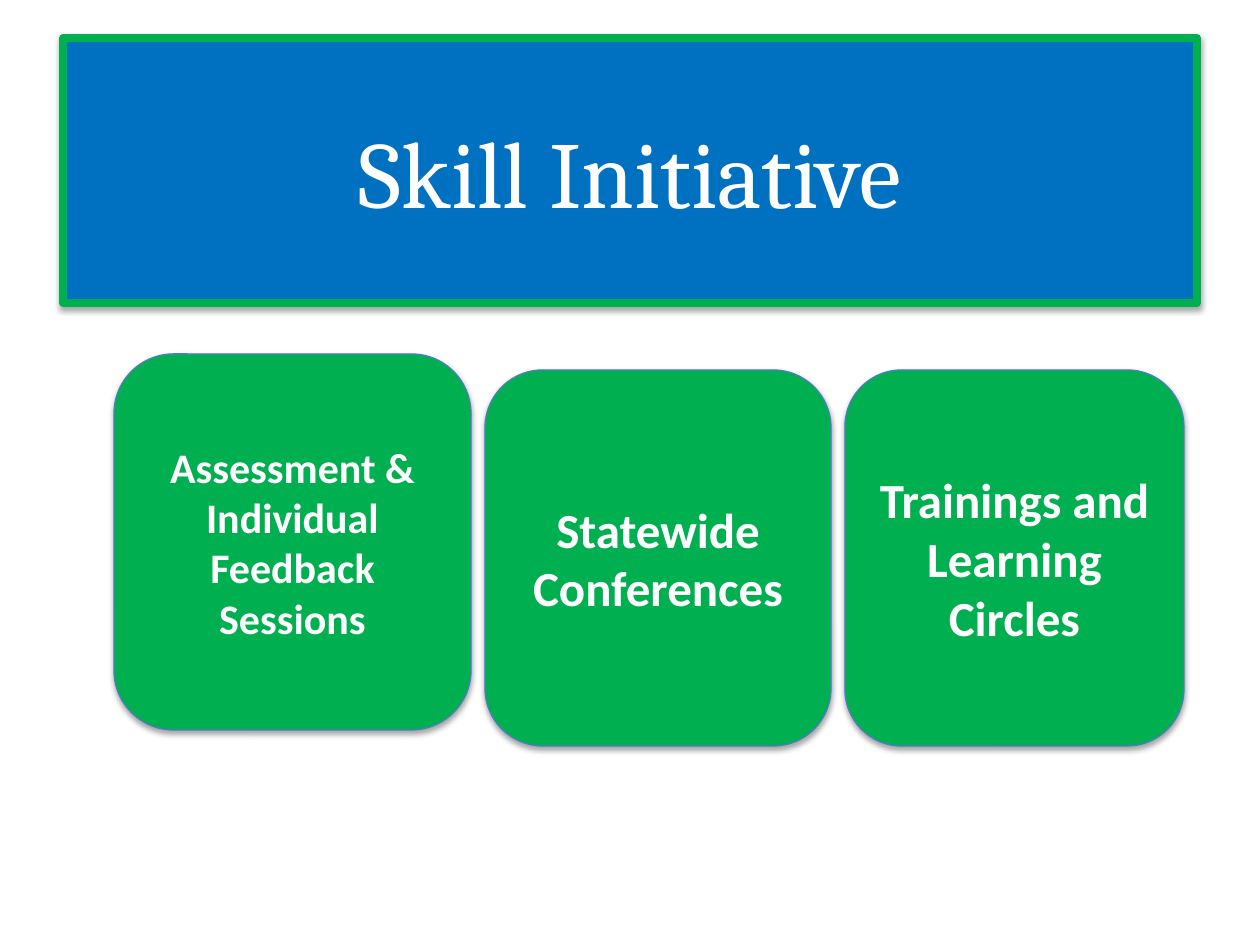
from lxml.etree import SubElement
from pptx import Presentation
from pptx.dml.color import RGBColor
from pptx.enum.shapes import MSO_SHAPE as Shape
from pptx.enum.text import MSO_ANCHOR as Anchor, PP_ALIGN as Align
from pptx.oxml.ns import qn
from pptx.util import Emu, Pt

# Content: text, width, top, font size
TITLE = "Skill Initiative"
ACTIVITIES = [
    ("Assessment & Individual Feedback Sessions", 357, 354, 24),
    ("Statewide Conferences", 346, 370, 28),
    ("Trainings and Learning Circles", 339, 370, 28),
]

# Layout in px, 126 to the inch
PX = 914400 / 126
SLIDE_SIZE = 1260, 945
TITLE_BOX = 63, 38, 1134, 265
CARD_LEFT, CARD_HEIGHT, CARD_GAP = 114, 376, 14

BLUE = RGBColor(0x00, 0x70, 0xC0)
GREEN = RGBColor(0x00, 0xB0, 0x50)
CARD_EDGE = RGBColor(0x4B, 0x7E, 0xBC)
WHITE = RGBColor(0xFF, 0xFF, 0xFF)


def px(length):
    return Emu(round(length * PX))


def paint(box, fill, edge, edge_width):
    box.fill.solid()
    box.fill.fore_color.rgb = fill
    box.line.color.rgb = edge
    box.line.width = Pt(edge_width)
    # Soft shadow straight below
    box.shadow.inherit = False
    effects = box._element.spPr.find(qn("a:effectLst"))
    shadow = SubElement(effects, qn("a:outerShdw"), blurRad="40000",
                        dist="23000", dir="5400000", rotWithShape="0")
    color = SubElement(shadow, qn("a:srgbClr"), val="000000")
    SubElement(color, qn("a:alpha"), val="35000")


def write(box, text, *, font, size, bold=False):
    frame = box.text_frame
    frame.word_wrap = True
    frame.vertical_anchor = Anchor.MIDDLE
    paragraph = frame.paragraphs[0]
    paragraph.alignment = Align.CENTER
    run = paragraph.add_run()
    run.text = text
    run.font.name = font
    run.font.size = Pt(size)
    run.font.bold = bold
    run.font.color.rgb = WHITE


def main():
    deck = Presentation()
    deck.slide_width, deck.slide_height = map(px, SLIDE_SIZE)
    slide = deck.slides.add_slide(deck.slide_layouts[5])

    # Title banner
    banner = slide.shapes.title
    banner.left, banner.top, banner.width, banner.height = map(px, TITLE_BOX)
    paint(banner, BLUE, GREEN, 4.5)
    write(banner, TITLE, font="Cambria", size=54)

    # Activity cards, left to right
    left = CARD_LEFT
    for activity, width, top, size in ACTIVITIES:
        card = slide.shapes.add_shape(
            Shape.ROUNDED_RECTANGLE, px(left), px(top), px(width), px(CARD_HEIGHT))
        paint(card, GREEN, CARD_EDGE, 0.75)
        write(card, activity, font="Calibri", size=size, bold=True)
        left += width + CARD_GAP

    deck.save("out.pptx")


if __name__ == "__main__":
    main()
